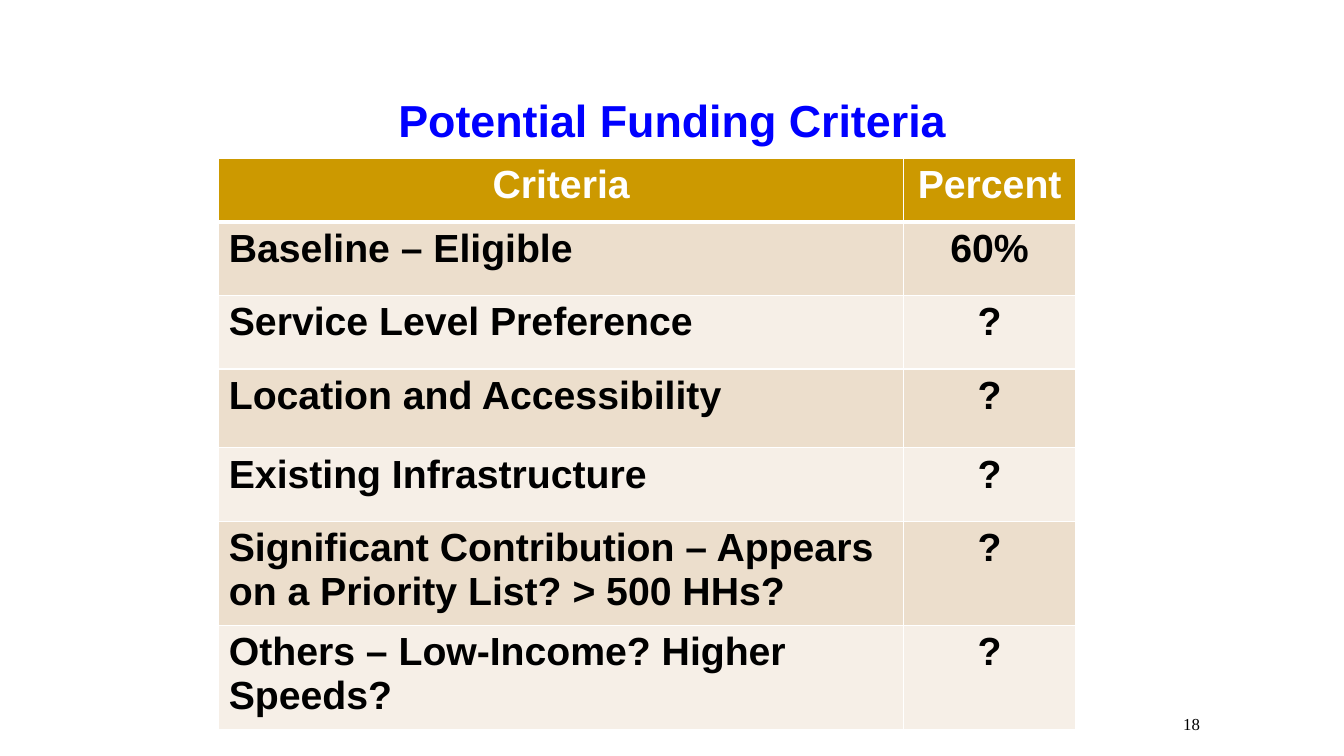
import pptx
import pptx.dml.color
import pptx.enum.text
import pptx.oxml
import pptx.oxml.ns
import pptx.util
from collections import namedtuple
from dataclasses import dataclass

PX = 9144  # EMU per px, 100 px to the inch
Box = namedtuple("Box", "left top width height")
ALIGN = pptx.enum.text.PP_ALIGN
ANCHOR = pptx.enum.text.MSO_ANCHOR


@dataclass(frozen=True)
class Theme:
    sans: str = "Arial"
    serif: str = "Times New Roman"
    title_size: int = 32
    table_size: int = 28
    number_size: int = 12
    title: str = "0000FF"
    ink: str = "000000"
    white: str = "FFFFFF"
    header: str = "CC9900"
    bands: tuple = ("ECDECC", "F6EFE7")
    rule: int = 1
    header_rule: int = 3


THEME = Theme()

CRITERIA = [
    ("Criteria", "Percent"),
    ("Baseline – Eligible", "60%"),
    ("Service Level Preference", "?"),
    ("Location and Accessibility", "?"),
    ("Existing Infrastructure", "?"),
    ("Significant Contribution – Appears on a Priority List? > 500 HHs?", "?"),
    ("Others – Low-Income? Higher Speeds?", "?"),
]
ROW_HEIGHTS = [63, 73, 73, 78, 73, 96, 97]
PERCENT_WIDTH = 171


def emu(box):
    return [length * PX for length in box]


def write(frame, text, align, size, color, font=THEME.sans, bold=True):
    para = frame.paragraphs[0]
    para.alignment = align
    span = para.add_run()
    span.text = text
    span.font.name = font
    span.font.size = pptx.util.Pt(size)
    span.font.bold = bold
    span.font.color.rgb = pptx.dml.color.RGBColor.from_string(color)


def add_text(page, box, anchor, *text_style, **font_style):
    frame = page.shapes.add_textbox(*emu(box)).text_frame
    frame.word_wrap = True
    frame.vertical_anchor = anchor
    write(frame, *text_style, **font_style)


def add_title(page, box):
    add_text(page, box, ANCHOR.MIDDLE, "Potential Funding Criteria",
             ALIGN.CENTER, THEME.title_size, THEME.title)


def add_page_number(page, box):
    add_text(page, box, ANCHOR.BOTTOM, "18", ALIGN.RIGHT,
             THEME.number_size, THEME.ink, font=THEME.serif, bold=False)


def set_borders(cell, top, bottom):
    """Rule all four sides; call before the cell fill is set."""
    properties = cell._tc.get_or_add_tcPr()
    widths = {"L": THEME.rule, "R": THEME.rule, "T": top, "B": bottom}
    for side, points in widths.items():
        properties.append(pptx.oxml.parse_xml(
            f'<a:ln{side} {pptx.oxml.ns.nsdecls("a")} w="{pptx.util.Pt(points)}">'
            f'<a:solidFill><a:srgbClr val="{THEME.white}"/></a:solidFill>'
            f'</a:ln{side}>'))


def add_criteria_table(page, box):
    table = page.shapes.add_table(len(CRITERIA), 2, *emu(box)).table
    for column, width in zip(table.columns, (box.width - PERCENT_WIDTH, PERCENT_WIDTH)):
        column.width = width * PX
    for row, height in zip(table.rows, ROW_HEIGHTS):
        row.height = height * PX

    for row_index, texts in enumerate(CRITERIA):
        is_header = row_index == 0
        fill = THEME.header if is_header else THEME.bands[(row_index - 1) % 2]
        color = THEME.white if is_header else THEME.ink
        top = THEME.header_rule if row_index == 1 else THEME.rule
        bottom = THEME.header_rule if is_header else THEME.rule
        for column_index, text in enumerate(texts):
            cell = table.cell(row_index, column_index)
            set_borders(cell, top, bottom)
            cell.fill.solid()
            cell.fill.fore_color.rgb = pptx.dml.color.RGBColor.from_string(fill)
            centred = is_header or column_index == 1
            write(cell.text_frame, text, ALIGN.CENTER if centred else ALIGN.LEFT,
                  THEME.table_size, color)


def add_criteria_slide(deck, box):
    page = deck.slides.add_slide(deck.slide_layouts[6])
    # Heading
    add_title(page, Box(box.left + 67, box.top + 83, 1200, 72))
    # Criteria and their weights
    add_criteria_table(page, Box(box.left + 217, box.top + 157, 850, sum(ROW_HEIGHTS)))
    # Footer
    add_page_number(page, Box(box.left + 956, box.top + 683, 244, 50))


def main():
    deck = pptx.Presentation()
    slide_box = Box(0, 0, 1333, 750)
    deck.slide_width = slide_box.width * PX
    deck.slide_height = slide_box.height * PX
    add_criteria_slide(deck, slide_box)
    deck.save("out.pptx")


if __name__ == "__main__":
    main()
